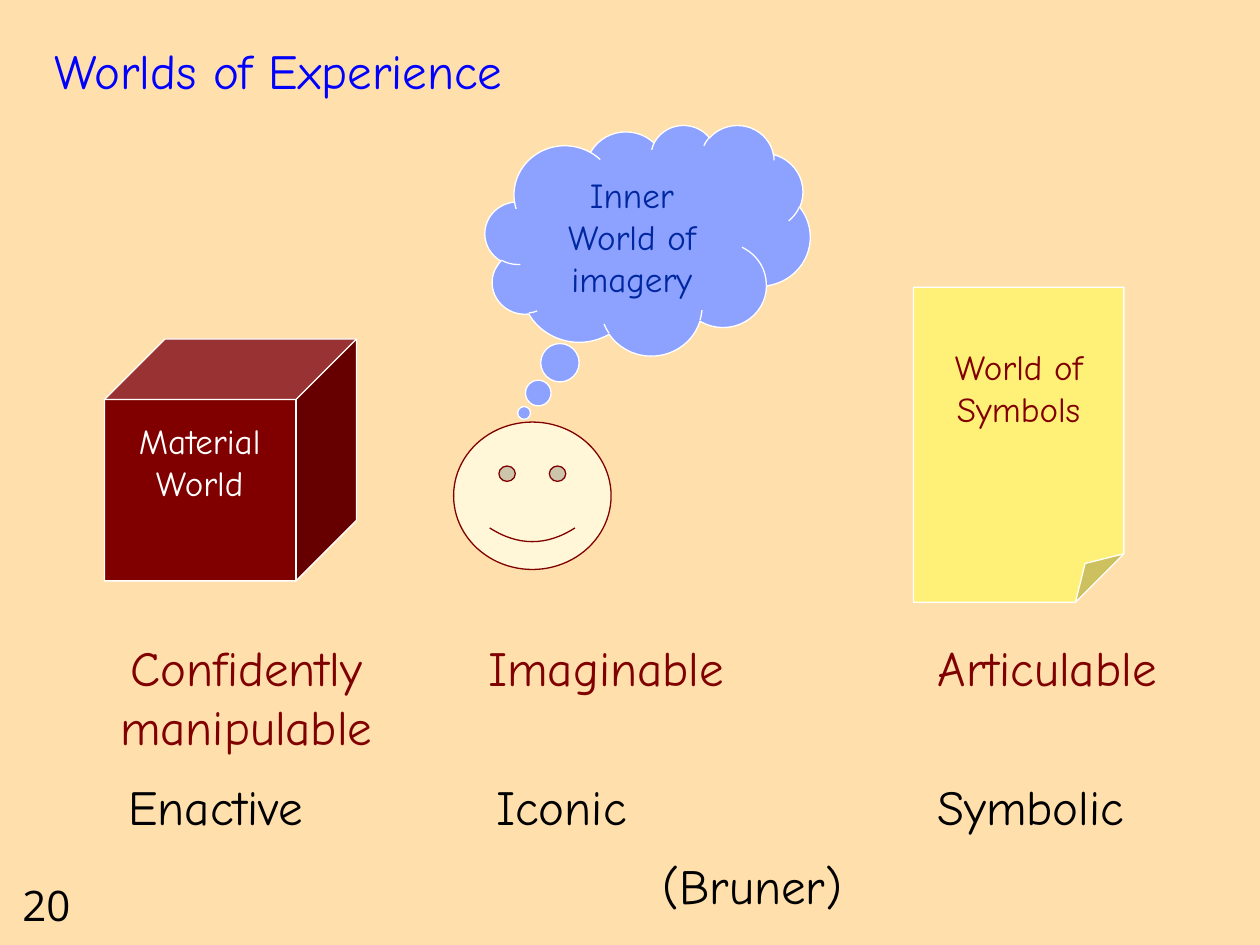
from lxml import etree
from pptx import Presentation
from pptx.dml.color import RGBColor
from pptx.enum.shapes import MSO_SHAPE as Preset
from pptx.enum.text import MSO_ANCHOR as Anchor, MSO_AUTO_SIZE as AutoSize, PP_ALIGN as Align
from pptx.oxml.ns import qn
from pptx.util import Inches, Pt

COLORS = {
    "sand": "FFDFAC", "blue": "0000FF", "maroon": "800000", "white": "FFFFFF",
    "paper": "FFF077", "skin": "FFF7D7", "cloud": "8DA1FF", "navy": "00279F",
    "black": "000000",
}
HAND, SANS = "Comic Neue", "Open Sans"


def color(name):
    return RGBColor.from_string(COLORS[name])


def write(frame, lines, size, ink, font=HAND, align=Align.LEFT):
    """Fill the first paragraph with lines parted by line breaks."""
    paragraph = frame.paragraphs[0]
    paragraph.alignment = align
    for index, line in enumerate(lines):
        if index:
            paragraph.add_line_break()
        run = paragraph.add_run()
        run.text = line
        run.font.size = Pt(size)
        run.font.name = font
        run.font.color.rgb = color(ink)


def add_label(shapes, box, lines, size, ink, font=HAND, align=Align.LEFT, wrap=False):
    label = shapes.add_textbox(*map(Inches, box))
    label.text_frame.word_wrap = wrap
    label.text_frame.auto_size = AutoSize.SHAPE_TO_FIT_TEXT
    write(label.text_frame, lines, size, ink, font, align)


def set_guides(figure, guides):
    """Set adjustments by name, as python-pptx lists none for some presets."""
    geometry = figure.element.spPr.find(qn("a:prstGeom"))
    for old_list in geometry.findall(qn("a:avLst")):
        geometry.remove(old_list)
    guide_list = etree.SubElement(geometry, qn("a:avLst"))
    for name, value in guides.items():
        etree.SubElement(guide_list, qn("a:gd"), name=name,
                         fmla=f"val {round(value * 100000)}")


def add_figure(shapes, preset, box, fill, line, guides):
    figure = shapes.add_shape(preset, *map(Inches, box))
    figure.shadow.inherit = False
    figure.fill.solid()
    figure.fill.fore_color.rgb = color(fill)
    figure.line.color.rgb = color(line)
    figure.line.width = Pt(0.75)
    set_guides(figure, guides)


def add_caption(shapes, left, top, height, words, ink):
    add_label(shapes, (left, top, 1.33, height), [words], 20, ink,
              align=Align.CENTER, wrap=True)


def add_material_world(slide, left, top, width, height):
    shapes = slide.shapes.add_group_shape().shapes
    add_figure(shapes, Preset.CUBE, (left, top, width, height),
               "maroon", "white", {"adj": 0.25})
    add_caption(shapes, left + 0.09, top + 0.59, 0.77, "Material World", "white")


def add_symbol_world(slide, left, top, width, height):
    shapes = slide.shapes.add_group_shape().shapes
    add_figure(shapes, Preset.FOLDED_CORNER, (left, top, width, height),
               "paper", "white", {"adj": 0.23})
    add_caption(shapes, left + 0.17, top + 0.41, 0.77, "World of Symbols", "maroon")


def add_inner_world(slide, left, top):
    """Place a smiling thinker below a thought cloud."""
    shapes = slide.shapes.add_group_shape().shapes
    add_figure(shapes, Preset.SMILEY_FACE, (left, top + 2.36, 1.25, 1.17),
               "skin", "maroon", {"adj": 0.05})
    add_figure(shapes, Preset.CLOUD_CALLOUT, (left + 0.25, top, 2.58, 1.83),
               "cloud", "white", {"adj1": -0.38, "adj2": 0.75})
    add_caption(shapes, left + 0.75, top + 0.34, 1.1, "Inner World of imagery", "navy")


def add_modes(slide, top):
    """Write how each world is met, with its mode of representation below."""
    abilities = [
        (0.83, 2.25, ["Confidently", "manipulable"]),
        (3.74, 2.14, ["Imaginable"]),
        (7.24, 2.14, ["Articulable"]),
    ]
    modes = [(0.92, 1.66, "Enactive"), (3.84, 1.24, "Iconic"), (7.34, 1.73, "Symbolic")]
    for left, width, lines in abilities:
        height = 0.1 + 0.47 * len(lines)
        add_label(slide.shapes, (left, top, width, height), lines, 28, "maroon",
                  align=Align.CENTER)
    for left, width, mode in modes:
        add_label(slide.shapes, (left, top + 1.1, width, 0.57), [mode], 28, "black")
    add_label(slide.shapes, (5.16, top + 1.73, 1.65, 0.57), ["(Bruner)"], 28, "black")


def add_title(slide, left, top, width, height):
    title = slide.shapes.title
    title.left, title.top = Inches(left), Inches(top)
    title.width, title.height = Inches(width), Inches(height)
    title.text_frame.vertical_anchor = Anchor.BOTTOM
    title.text_frame.auto_size = AutoSize.NONE
    write(title.text_frame, ["Worlds of Experience"], 28, "blue")


def main():
    deck = Presentation()
    deck.slide_width, deck.slide_height = Inches(10), Inches(7.5)
    slide = deck.slides.add_slide(deck.slide_layouts.get_by_name("Title Only"))
    slide.background.fill.solid()
    slide.background.fill.fore_color.rgb = color("sand")

    add_title(slide, 0.33, 0.17, 8.5, 0.67)
    add_label(slide.shapes, (0.08, 6.93, 0.75, 0.5), ["20"], 24, "black", SANS, wrap=True)
    add_material_world(slide, 0.83, 2.69, 2, 1.92)
    add_symbol_world(slide, 7.25, 2.28, 1.67, 2.5)
    add_inner_world(slide, 3.6, 0.99)
    add_modes(slide, 5.01)
    deck.save("out.pptx")


if __name__ == "__main__":
    main()
